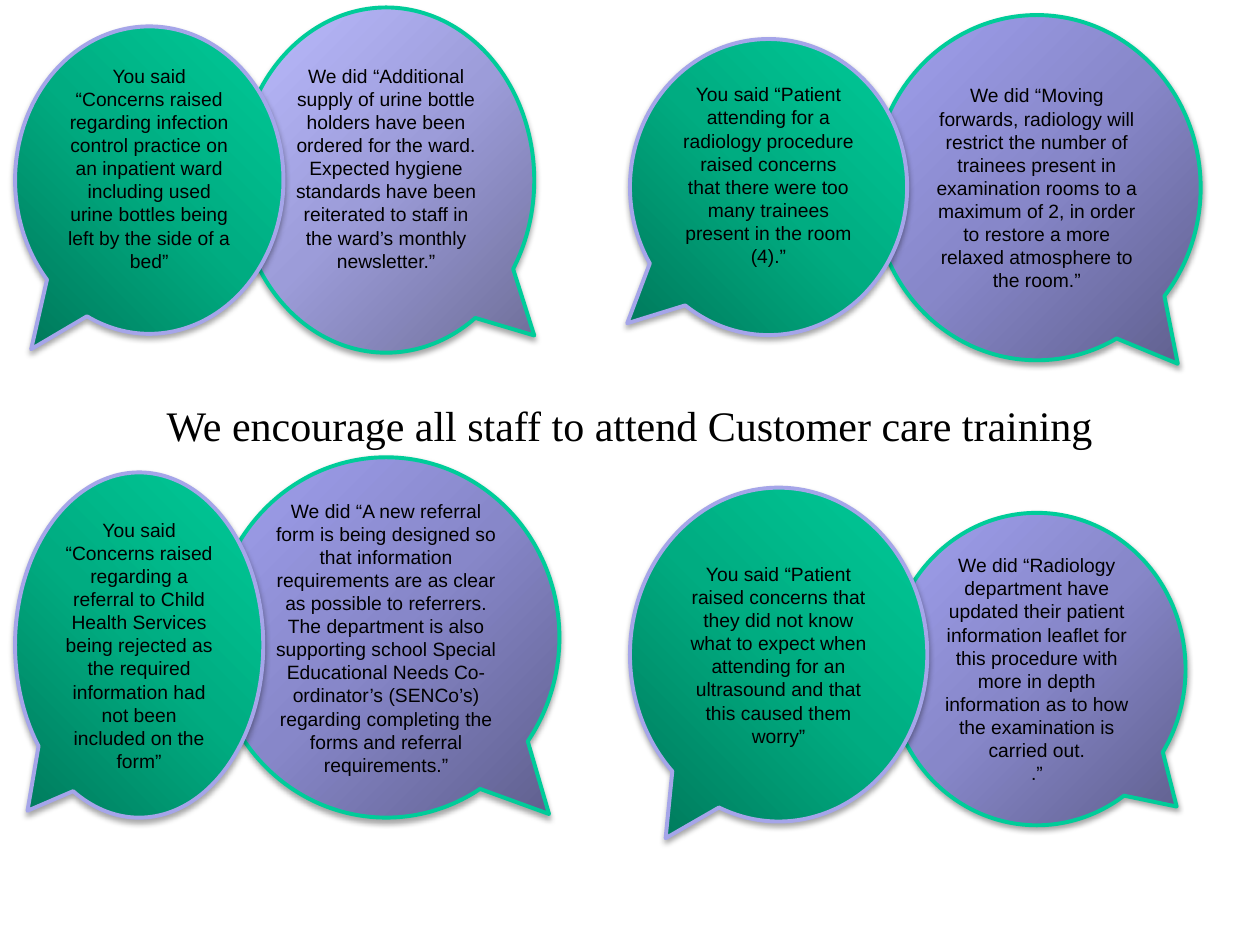
from dataclasses import dataclass

from lxml import etree
from pptx import Presentation
from pptx.dml.color import RGBColor
from pptx.enum.shapes import MSO_SHAPE
from pptx.enum.text import MSO_ANCHOR, PP_ALIGN
from pptx.oxml import parse_xml
from pptx.oxml.ns import nsdecls, qn
from pptx.util import Inches, Pt


@dataclass(frozen=True)
class Theme:
    ink: str = "000000"
    bubble_font: str = "Arial"
    bubble_size: int = 11
    banner_font: str = "Times New Roman"
    banner_size: int = 24
    outline: float = 2.25
    green_line: str = "00CC99"
    lilac_line: str = "A5A5E9"
    greens: tuple = ("00795B", "00AC81", "00CC99")
    violets: tuple = ("5F5F8D", "8787C9", "A0A0EE")
    pale_violets: tuple = ("6E6E98", "9C9CD9", "BBBBFF")


THEME = Theme()
BLANK_LINE = 0.19

# Each bubble: (left, top, width, height) within its pair, tail tip, lines of text,
# and the extra room below the text.
PAIRS = [
    dict(origin=(0.12, 0.06), violets=THEME.pale_violets,
         did=((1.77, 0, 2.35, 2.74), (0.5, 0.45),
              ["We did “Additional supply of urine bottle holders have been ordered for the ward. "
               "Expected hygiene standards have been reiterated to staff in the ward’s monthly "
               "newsletter.”"], BLANK_LINE),
         said=((0, 0.15, 2.13, 2.44), (-0.44, 0.55),
               ["You said “Concerns raised regarding infection control practice on an inpatient "
                "ward including used urine bottles being left by the side of a bed”"], BLANK_LINE)),
    dict(origin=(5, 0.12), violets=THEME.violets,
         did=((1.93, 0, 2.6, 2.74), (0.43, 0.51),
              ["We did “Moving forwards, radiology will restrict the number of trainees present in "
               "examination rooms to a maximum of 2, in order to restore a more relaxed atmosphere "
               "to the room.”"], 0),
         said=((0, 0.19, 2.2, 2.35), (-0.51, 0.46),
               ["You said “Patient attending for a radiology procedure raised concerns that there "
                "were too many trainees present in the room (4).”"], BLANK_LINE)),
    dict(origin=(0.12, 3.63), violets=THEME.violets,
         did=((1.57, 0, 2.75, 2.86), (0.47, 0.49),
              ["We did “A new referral form is being designed so that information requirements are "
               "as clear as possible to referrers. The department is also supporting school Special "
               "Educational Needs Co-ordinator’s (SENCo’s) regarding completing the forms and "
               "referral requirements.”"], 0),
         said=((0, 0.12, 1.97, 2.74), (-0.45, 0.48),
               ["You said “Concerns raised regarding a referral to Child Health Services being "
                "rejected as the required information had not been included on the form”"], 0)),
    dict(origin=(5, 3.87), violets=THEME.violets,
         did=((2.05, 0.2, 2.36, 2.48), (0.47, 0.44),
              ["We did “Radiology department have updated their patient information leaflet for "
               "this procedure with more in depth information as to how the examination is "
               "carried out.", ".”"], 0),
         said=((0, 0, 2.36, 2.65), (-0.38, 0.55),
               ["You said “Patient raised concerns that they did not know what to expect when "
                "attending for an ultrasound and that this caused them worry”"], 0)),
]


def style_paragraph(paragraph, text, font_name, size):
    paragraph.text = text
    paragraph.alignment = PP_ALIGN.CENTER
    paragraph.font.name = font_name
    paragraph.font.size = Pt(size)
    paragraph.font.color.rgb = RGBColor.from_string(THEME.ink)


def fill_from_corner(shape, colours, dark_side):
    """Radial gradient, darkest at the bottom corner on dark_side ("l" or "r")."""
    stops = "".join(
        f'<a:gs pos="{i * 50000}"><a:srgbClr val="{colour}"/></a:gs>'
        for i, colour in enumerate(colours))
    focus = "r" if dark_side == "l" else "l"
    gradient = parse_xml(
        f'<a:gradFill {nsdecls("a")} rotWithShape="1"><a:gsLst>{stops}</a:gsLst>'
        f'<a:path path="circle"><a:fillToRect {focus}="100000" t="100000"/></a:path>'
        '</a:gradFill>')
    shape.fill.background()
    properties = shape.element.spPr
    properties.replace(properties.find(qn("a:noFill")), gradient)


def add_soft_shadow(shape):
    shape.shadow.inherit = False
    effects = shape.element.spPr.find(qn("a:effectLst"))
    shadow = etree.SubElement(effects, qn("a:outerShdw"), blurRad="40000", dist="23000",
                              dir="5400000", rotWithShape="0")
    colour = etree.SubElement(shadow, qn("a:srgbClr"), val="000000")
    etree.SubElement(colour, qn("a:alpha"), val="35000")


def add_bubble(slide, origin, bubble, colours, outline):
    (left, top, width, height), tail, lines, room_below = bubble
    callout = slide.shapes.add_shape(
        MSO_SHAPE.OVAL_CALLOUT, Inches(origin[0] + left), Inches(origin[1] + top),
        Inches(width), Inches(height))
    callout.adjustments[0], callout.adjustments[1] = tail
    fill_from_corner(callout, colours, "l" if tail[0] < 0 else "r")
    callout.line.color.rgb = RGBColor.from_string(outline)
    callout.line.width = Pt(THEME.outline)
    add_soft_shadow(callout)

    frame = callout.text_frame
    frame.word_wrap = True
    frame.vertical_anchor = MSO_ANCHOR.MIDDLE
    frame.margin_bottom = Inches(0.05 + room_below)
    for i, line in enumerate(lines):
        paragraph = frame.add_paragraph() if i else frame.paragraphs[0]
        style_paragraph(paragraph, line, THEME.bubble_font, THEME.bubble_size)


def add_pair(slide, origin, violets, did, said):
    """A response bubble with the comment it answers overlapping it in front."""
    add_bubble(slide, origin, did, violets, THEME.green_line)
    add_bubble(slide, origin, said, THEME.greens, THEME.lilac_line)


def add_banner(slide, left, top, width, height):
    banner = slide.shapes.add_textbox(Inches(left), Inches(top), Inches(width), Inches(height))
    banner.text_frame.word_wrap = True
    style_paragraph(banner.text_frame.paragraphs[0],
                    "We encourage all staff to attend Customer care training",
                    THEME.banner_font, THEME.banner_size)


def main():
    deck = Presentation()
    deck.slide_width, deck.slide_height = Inches(10), Inches(7.5)
    slide = deck.slides.add_slide(deck.slide_layouts[6])
    add_banner(slide, 0.75, 3.12, 8.5, 0.5)
    for pair in PAIRS:
        add_pair(slide, **pair)
    deck.save("out.pptx")


if __name__ == "__main__":
    main()
